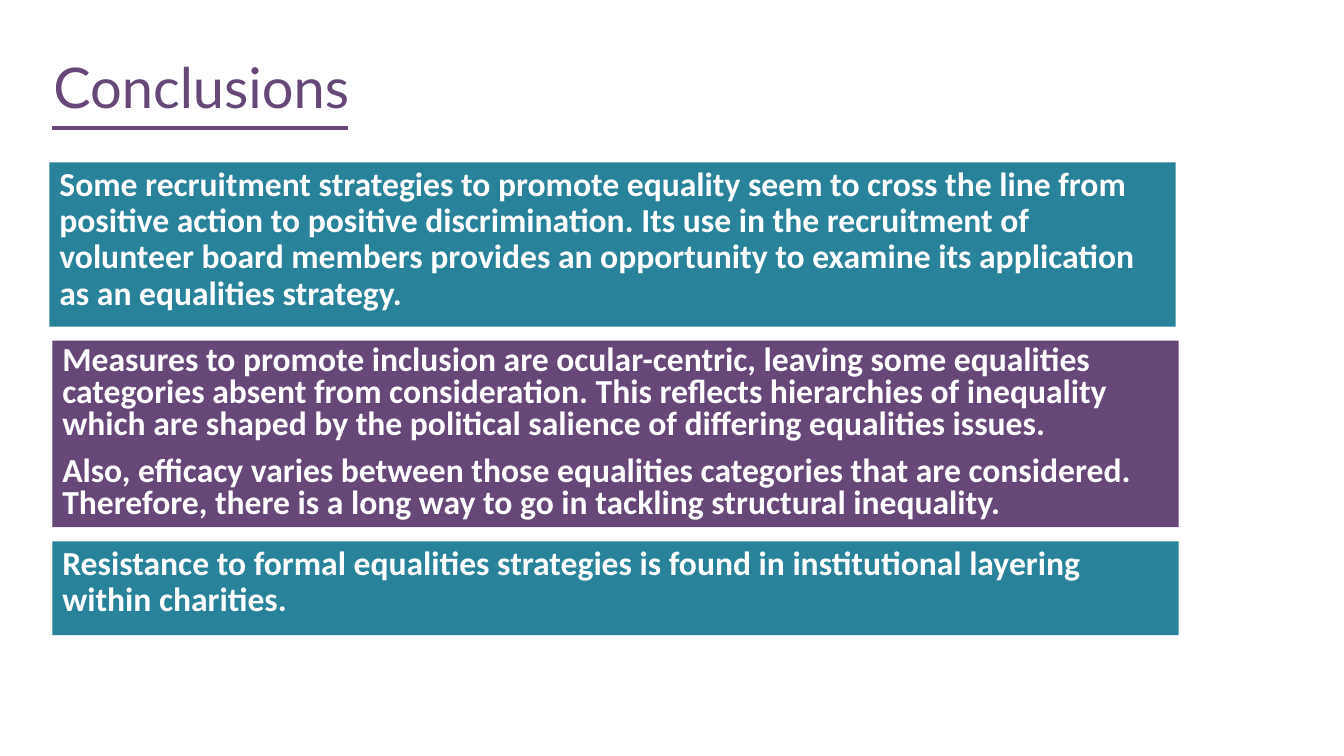
"""Build the Conclusions slide with three stacked statement bands."""
import pptx
import pptx.dml.color
import pptx.enum.shapes
import pptx.enum.text
import pptx.oxml.ns
import pptx.util
from lxml import etree

SLIDE_WIDTH = pptx.util.Inches(13.33)
SLIDE_HEIGHT = pptx.util.Inches(7.5)
PURPLE, TEAL, WHITE = "664778", "28839A", "FFFFFF"
MARGIN = 3.9
BAND_WIDTH = 83.8
BAND_TOP = 21.47
BAND_GAP = 1.87
TITLE_FORMAT = {"name": "Lato", "size": pptx.util.Pt(40)}
BAND_FORMAT = {"name": "Calibri", "size": pptx.util.Pt(24), "bold": True}
BANDS = [
    (3.68, 21.73, TEAL, 0.9, [
        "Some recruitment strategies to promote equality seem to cross the line from "
        "positive action to positive discrimination. Its use in the recruitment of "
        "volunteer board members provides an opportunity to examine its application "
        "as an equalities strategy."]),
    (MARGIN, 24.67, PURPLE, 0.8, [
        "Measures to promote inclusion are ocular-centric, leaving some equalities "
        "categories absent from consideration. This reflects hierarchies of inequality "
        "which are shaped by the political salience of differing equalities issues.",
        "Also, efficacy varies between those equalities categories that are considered. "
        "Therefore, there is a long way to go in tackling structural inequality."]),
    (MARGIN, 12.4, TEAL, 0.9, [
        "Resistance to formal equalities strategies is found in institutional layering "
        "within charities."]),
]


def color(value):
    """Turn a hex string into a colour."""
    return pptx.dml.color.RGBColor.from_string(value)


def across(percent):
    """Return a percentage of the slide width."""
    return round(SLIDE_WIDTH * percent / 100)


def down(percent):
    """Return a percentage of the slide height."""
    return round(SLIDE_HEIGHT * percent / 100)


def write_text(shape, texts, text_format, text_color, line_spacing, anchor):
    """Fill a shape with left-aligned paragraphs."""
    frame = shape.text_frame
    frame.word_wrap = True
    frame.vertical_anchor = anchor
    for index, text in enumerate(texts):
        paragraph = frame.add_paragraph() if index else frame.paragraphs[0]
        paragraph.text = text
        paragraph.alignment = pptx.enum.text.PP_ALIGN.LEFT
        paragraph.line_spacing = line_spacing
        paragraph.space_before = pptx.util.Pt(10 if index else 0)
        for name, value in text_format.items():
            setattr(paragraph.font, name, value)
        paragraph.font.color.rgb = color(text_color)


def add_title(slide, text):
    """Add the slide title."""
    box = slide.shapes.add_textbox(across(3.23), down(7.07), across(60.17), down(9.87))
    write_text(box, [text], TITLE_FORMAT, PURPLE, 0.9, pptx.enum.text.MSO_ANCHOR.MIDDLE)


def add_rule(slide, left, right, top):
    """Add a horizontal rule."""
    rule = slide.shapes.add_connector(
        pptx.enum.shapes.MSO_CONNECTOR.STRAIGHT,
        across(left), down(top), across(right), down(top))
    rule.line.color.rgb = color(PURPLE)
    rule.line.width = pptx.util.Pt(2.25)
    etree.SubElement(rule._element.spPr, pptx.oxml.ns.qn("a:effectLst"))


def add_band(slide, left, top, height, fill, line_spacing, texts):
    """Add a filled band with bold white text."""
    band = slide.shapes.add_shape(
        pptx.enum.shapes.MSO_SHAPE.RECTANGLE,
        across(left), down(top), across(BAND_WIDTH), down(height))
    band.shadow.inherit = False
    band.fill.solid()
    band.fill.fore_color.rgb = color(fill)
    band.line.fill.background()
    write_text(band, texts, BAND_FORMAT, WHITE, line_spacing,
               pptx.enum.text.MSO_ANCHOR.TOP)


def main():
    """Build and save the presentation."""
    presentation = pptx.Presentation()
    presentation.slide_width = SLIDE_WIDTH
    presentation.slide_height = SLIDE_HEIGHT
    slide = presentation.slides.add_slide(presentation.slide_layouts[6])
    add_title(slide, "Conclusions")
    add_rule(slide, MARGIN, 25.88, 16.93)
    top = BAND_TOP
    for left, height, fill, line_spacing, texts in BANDS:
        add_band(slide, left, top, height, fill, line_spacing, texts)
        top += height + BAND_GAP
    presentation.save("out.pptx")


if __name__ == "__main__":
    main()
